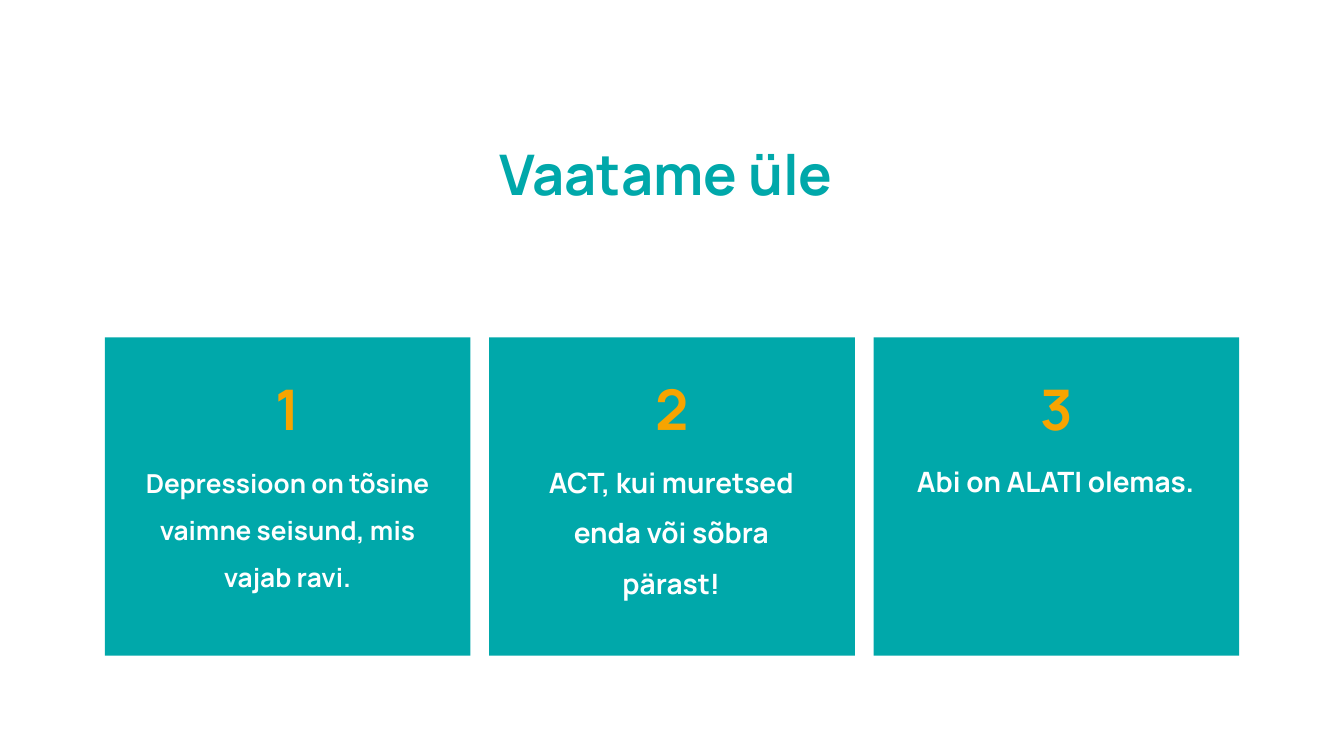
from dataclasses import dataclass

from pptx import Presentation
from pptx.dml.color import RGBColor
from pptx.enum.shapes import MSO_SHAPE as Preset
from pptx.enum.text import MSO_ANCHOR as Anchor, MSO_AUTO_SIZE as AutoSize, PP_ALIGN as Align
from pptx.util import Inches, Pt


@dataclass(frozen=True)
class Theme:
    font: str = "Manrope"
    teal: RGBColor = RGBColor(0x00, 0xA8, 0xAA)
    orange: RGBColor = RGBColor(0xF7, 0xA4, 0x00)
    white: RGBColor = RGBColor(0xFF, 0xFF, 0xFF)
    heading_size: int = 30
    body_size: int = 15
    small_body_size: int = 14
    line_spacing: float = 1.5


@dataclass(frozen=True)
class Area:
    left: float
    top: float
    width: float
    height: float

    def lengths(self) -> tuple:
        return tuple(Inches(v) for v in (self.left, self.top, self.width, self.height))


@dataclass(frozen=True)
class Card:
    text: str
    text_area: Area
    size: int


THEME = Theme()
PAGE_WIDTH = 10
PAGE_HEIGHT = PAGE_WIDTH * 9 / 16
CARD_LEFT, CARD_TOP, CARD_STEP = 0.78, 2.51, 2.86
CARD_WIDTH, CARD_HEIGHT = 2.72, 2.37
NUMBER_WIDTH, NUMBER_HEIGHT = 0.63, 0.65
CARDS = [
    Card("Depressioon on tõsine vaimne seisund, mis vajab ravi.",
         Area(0.97, 3.32, 2.34, 1.48), THEME.small_body_size),
    Card("ACT, kui muretsed enda või sõbra pärast!",
         Area(3.92, 3.3, 2.15, 1.34), THEME.body_size),
    Card("Abi on ALATI olemas.",
         Area(6.72, 3.29, 2.27, 1.24), THEME.body_size),
]


def write_text(box, text: str, *, size: int, color: RGBColor,
               inset_x: float = 0.02, inset_y: float = 0.02) -> None:
    frame = box.text_frame
    frame.word_wrap = True
    frame.auto_size = AutoSize.NONE
    frame.vertical_anchor = Anchor.TOP
    frame.margin_left = frame.margin_right = Inches(inset_x)
    frame.margin_top = frame.margin_bottom = Inches(inset_y)
    para = frame.paragraphs[0]
    para.alignment = Align.CENTER
    para.line_spacing = THEME.line_spacing
    para.space_before = para.space_after = Pt(0)
    span = para.add_run()
    span.text = text
    span.font.name = THEME.font
    span.font.size = Pt(size)
    span.font.bold = True
    span.font.color.rgb = color


def draw_title(page, text: str, area: Area) -> None:
    title = page.shapes.title
    title.left, title.top, title.width, title.height = area.lengths()
    write_text(title, text, size=THEME.heading_size, color=THEME.teal)


def draw_card(page, index: int, card: Card) -> None:
    left = CARD_LEFT + index * CARD_STEP
    panel_area = Area(left, CARD_TOP, CARD_WIDTH, CARD_HEIGHT)
    panel = page.shapes.add_shape(Preset.RECTANGLE, *panel_area.lengths())
    panel.shadow.inherit = False
    panel.fill.solid()
    panel.fill.fore_color.rgb = THEME.teal
    panel.line.fill.background()

    number_area = Area(left + (CARD_WIDTH - NUMBER_WIDTH) / 2, CARD_TOP + 0.01,
                       NUMBER_WIDTH, NUMBER_HEIGHT)
    number_box = page.shapes.add_textbox(*number_area.lengths())
    write_text(number_box, str(index + 1), size=THEME.heading_size, color=THEME.orange)

    text_box = page.shapes.add_textbox(*card.text_area.lengths())
    write_text(text_box, card.text, size=card.size, color=THEME.white,
               inset_x=0.07, inset_y=0.04)


def main() -> None:
    deck = Presentation()
    deck.slide_width, deck.slide_height = Inches(PAGE_WIDTH), Inches(PAGE_HEIGHT)
    page = deck.slides.add_slide(deck.slide_layouts[5])
    page.background.fill.solid()
    page.background.fill.fore_color.rgb = THEME.white
    draw_title(page, "Vaatame üle", Area(0.84, 0.77, 8.23, 0.78))
    for index, card in enumerate(CARDS):
        draw_card(page, index, card)
    deck.save("out.pptx")


if __name__ == "__main__":
    main()
